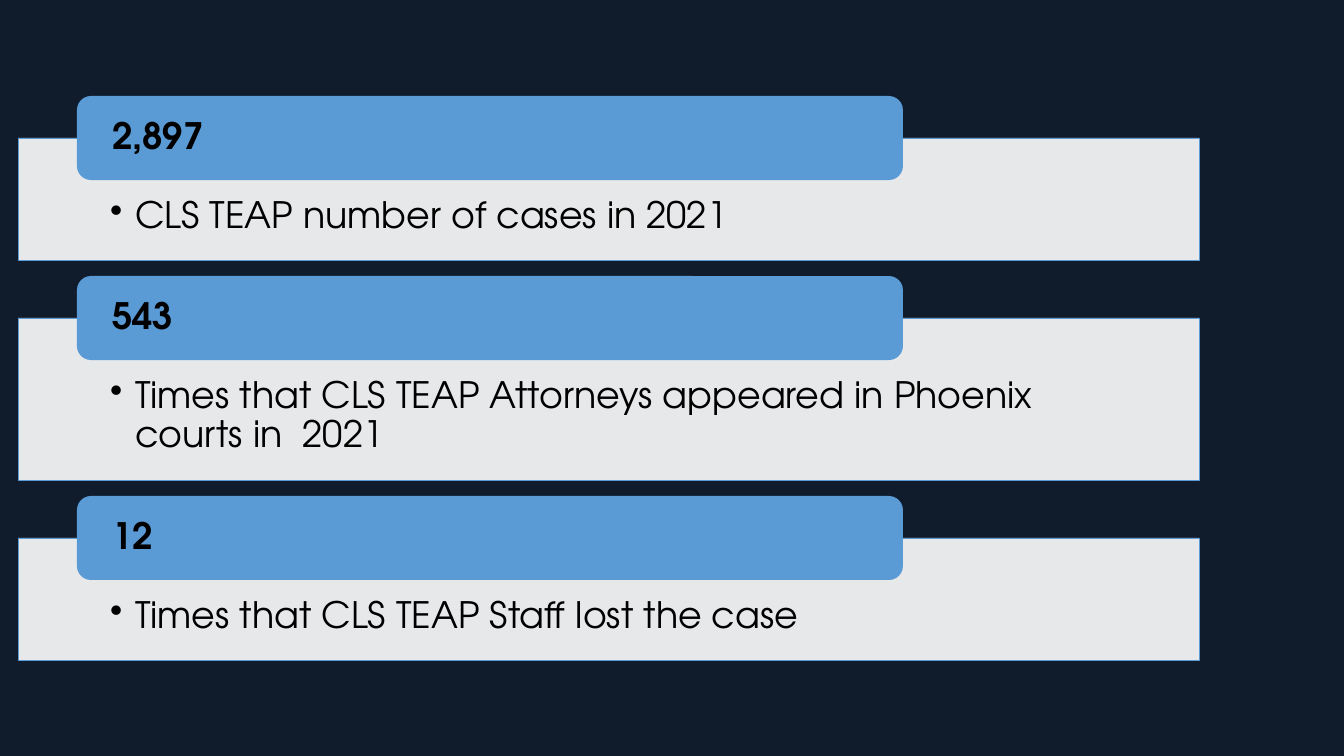
from lxml.etree import SubElement
from pptx import Presentation
from pptx.dml.color import RGBColor
from pptx.enum.shapes import MSO_SHAPE
from pptx.enum.text import MSO_ANCHOR, PP_ALIGN
from pptx.oxml.ns import qn
from pptx.util import Pt

EMU_PER_PX = 914400 / 100.8


def px(length):
    return round(length * EMU_PER_PX)


def color(hex_string):
    return RGBColor.from_string(hex_string)


class CaseSlide:
    font_name = "TeX Gyre Adventor"
    font_size = 26
    navy, blue, white, black = "101B2C", "5B9BD5", "FFFFFF", "000000"

    def __init__(self, presentation):
        self.slide = presentation.slides.add_slide(presentation.slide_layouts[6])

    def box(self, kind, left, top, width, height, fill):
        shape = self.slide.shapes.add_shape(
            kind, px(left), px(top), px(width), px(height)
        )
        shape.shadow.inherit = False
        shape.fill.solid()
        shape.fill.fore_color.rgb = color(fill)
        shape.line.fill.background()
        return shape

    def label(self, shape, text, margins, anchor, bold=False, bullet=False):
        frame = shape.text_frame
        frame.word_wrap = True
        frame.vertical_anchor = anchor
        frame.margin_left, frame.margin_top, frame.margin_right, frame.margin_bottom = (
            px(margin) for margin in margins
        )
        paragraph = frame.paragraphs[0]
        paragraph.alignment = PP_ALIGN.LEFT
        paragraph.line_spacing = 0.9
        if bullet:
            properties = paragraph._p.get_or_add_pPr()
            properties.set("marL", str(px(25)))
            properties.set("indent", str(px(-25)))
            SubElement(properties, qn("a:buChar"), char="•")
        run = paragraph.add_run()
        run.text = text
        run.font.name = self.font_name
        run.font.size = Pt(self.font_size)
        run.font.bold = bold
        run.font.color.rgb = color(self.black)

    def backdrop(self, width, height):
        self.box(MSO_SHAPE.RECTANGLE, 0, 0, width, height, self.navy)

    def panel(self, top, height, text):
        shape = self.box(MSO_SHAPE.RECTANGLE, 18, top, 1181, height, self.white)
        fill_color = shape._element.spPr.find(qn("a:solidFill")).find(qn("a:srgbClr"))
        SubElement(fill_color, qn("a:alpha"), val="90000")
        shape.line.color.rgb = color(self.blue)
        shape.line.width = Pt(0.5)
        self.label(shape, text, (92, 59, 92, 20), MSO_ANCHOR.TOP, bullet=True)

    def tab(self, top, height, number):
        shape = self.box(MSO_SHAPE.ROUNDED_RECTANGLE, 77, top, 826, height, self.blue)
        self.label(shape, number, (31, 0, 31, 0), MSO_ANCHOR.MIDDLE, bold=True)


def main():
    slide_width, slide_height = 1344, 756
    tab_height, panel_gap = 84, 58
    facts = [
        ("2,897", "CLS TEAP number of cases in 2021", 122),
        ("543", "Times that CLS TEAP Attorneys appeared in Phoenix courts in  2021", 162),
        ("12", "Times that CLS TEAP Staff lost the case", 122),
    ]
    presentation = Presentation()
    presentation.slide_width = px(slide_width)
    presentation.slide_height = px(slide_height)
    case_slide = CaseSlide(presentation)
    case_slide.backdrop(slide_width, slide_height)
    panel_top = 138
    for number, text, panel_height in facts:
        case_slide.panel(panel_top, panel_height, text)
        case_slide.tab(panel_top - tab_height // 2, tab_height, number)
        panel_top += panel_height + panel_gap
    presentation.save("out.pptx")


if __name__ == "__main__":
    main()
